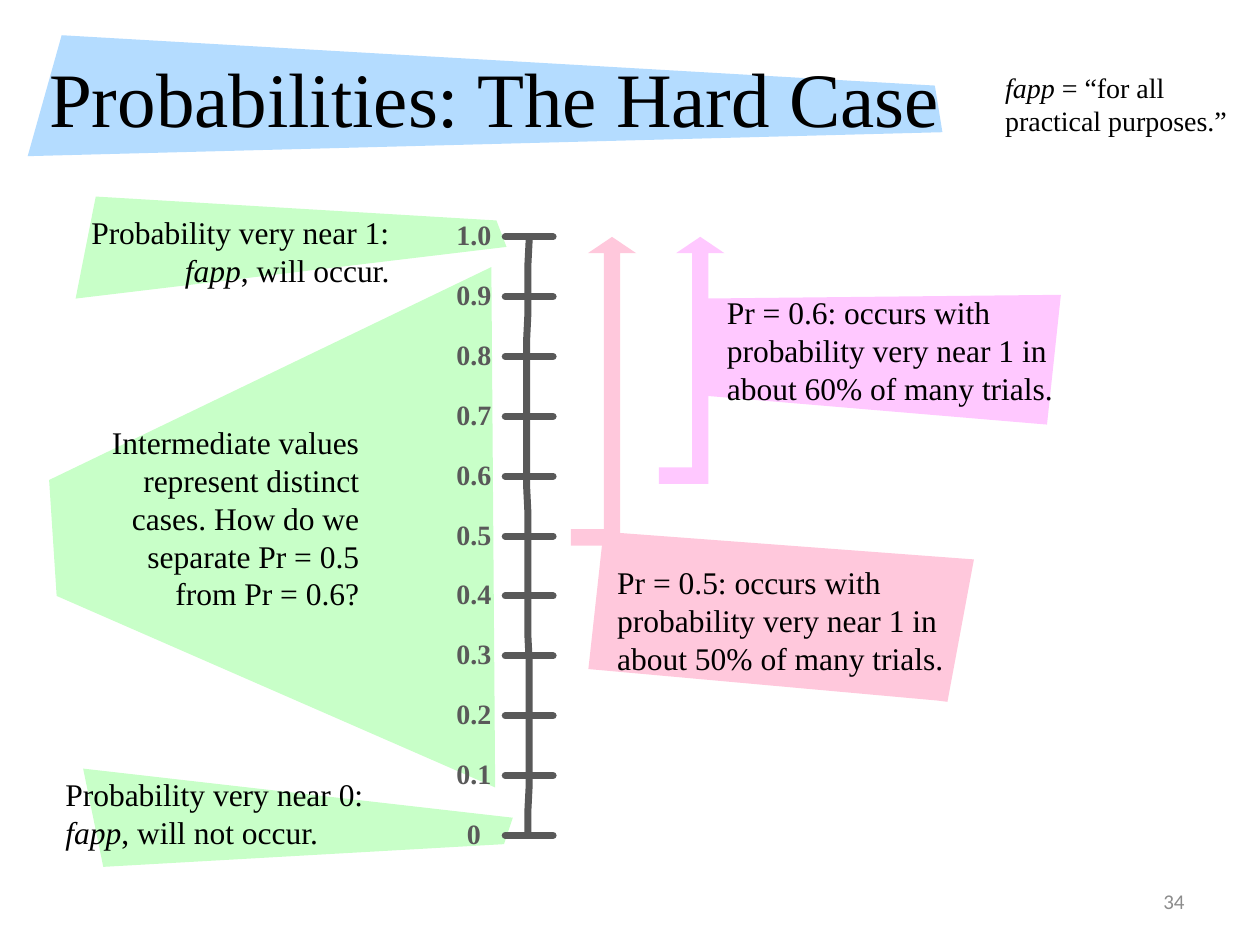
from lxml.etree import SubElement
from pptx import Presentation
from pptx.dml.color import RGBColor
from pptx.enum.shapes import MSO_CONNECTOR, MSO_SHAPE
from pptx.enum.text import MSO_ANCHOR, MSO_AUTO_SIZE, PP_ALIGN
from pptx.oxml.ns import qn
from pptx.util import Pt

PX = 9144
SERIF, BLACK, GREY = "Times New Roman", "000000", "595959"
BLUE, GREEN, PINK, VIOLET = "B4DCFF", "C8FFC8", "FFC8DC", "FFC8FF"
LEFT, RIGHT, CENTER = PP_ALIGN.LEFT, PP_ALIGN.RIGHT, PP_ALIGN.CENTER

TITLE = "Probabilities: The Hard Case"
PANELS = [
    (BLUE, [(49, 28), (742, 68), (748, 105), (22, 124)]),
    (GREEN, [(76, 156), (394, 175), (402, 196), (60, 237)]),
    (GREEN, [(390, 212), (393, 625), (45, 473), (39, 381)]),
    (PINK, [(479, 422), (773, 444), (752, 557), (744, 556), (467, 531)]),
    (VIOLET, [(842, 234), (555, 237), (558, 314), (831, 337)]),
    (GREEN, [(82, 688), (400, 670), (407, 649), (66, 610)]),
]
ARROWS = [(PINK, (453, 188, 52, 245)), (VIOLET, (523, 188, 52, 196))]
# Each paragraph is a list of (words, italic) runs.
NOTES = [
    ((57, 164, 262, 71), 18, RIGHT, False,
     [[("Probability very near 1:", False)], [("fapp", True), (", will occur.", False)]]),
    ((788, 51, 203, 64), 16, LEFT, True,
     [[("fapp", True), (" = “for all practical purposes.”", False)]]),
    ((57, 331, 238, 162), 18, RIGHT, True,
     [[("Intermediate values represent distinct cases. "
        "How do we separate Pr = 0.5 from Pr = 0.6?", False)]]),
    ((480, 442, 308, 101), 18, LEFT, True,
     [[("Pr = 0.5: occurs with probability very near 1 in about 50% of many trials.", False)]]),
    ((567, 228, 299, 101), 18, LEFT, True,
     [[("Pr = 0.6: occurs with probability very near 1 in about 60% of many trials.", False)]]),
    ((42, 610, 262, 71), 18, LEFT, False,
     [[("Probability very near 0:", False)], [("fapp", True), (", will not occur.", False)]]),
]
TICKS = ["1.0", "0.9", "0.8", "0.7", "0.6", "0.5", "0.4", "0.3", "0.2", "0.1", "0"]
AXIS_TOP, AXIS_BOTTOM = 188, 663
AXIS_CURVE = [(420, 190), (415, 349), (422, 504), (419, 663)]


def rgb(value):
    return RGBColor.from_string(value)


def emu(box):
    return [round(v * PX) for v in box]


def fill(sp, color):
    sp.shadow.inherit = False
    sp.fill.solid()
    sp.fill.fore_color.rgb = rgb(color)
    sp.line.fill.background()


def stroke(sp):
    sp.line.color.rgb = rgb(GREY)
    sp.line.width = Pt(4)
    sp._element.spPr.find(qn("a:ln")).set("cap", "rnd")


def outline(shapes, points, close=True):
    builder = shapes.build_freeform(*points[0], scale=PX)
    builder.add_line_segments(points[1:], close=close)
    return builder.convert_to_shape()


def style(r, size, color=BLACK, font=SERIF, bold=False, italic=False):
    r.font.size, r.font.name = Pt(size), font
    r.font.bold, r.font.italic = bold, italic
    r.font.color.rgb = rgb(color)


def add_text(shapes, box, size, align, wrap, paragraphs, **look):
    tf = shapes.add_textbox(*emu(box)).text_frame
    tf.word_wrap = wrap
    tf.auto_size = MSO_AUTO_SIZE.SHAPE_TO_FIT_TEXT
    for i, runs in enumerate(paragraphs):
        p = tf.add_paragraph() if i else tf.paragraphs[0]
        p.alignment = align
        for words, italic in runs:
            r = p.add_run()
            r.text = words
            style(r, size, italic=italic, **look)
    return tf


def bezier(t):
    weights = ((1 - t) ** 3, 3 * t * (1 - t) ** 2, 3 * t * t * (1 - t), t ** 3)
    return tuple(sum(w * pt[k] for w, pt in zip(weights, AXIS_CURVE)) for k in (0, 1))


def add_title(slide):
    title = slide.shapes.title
    title.left, title.top, title.width, title.height = emu((29, 30, 743, 94))
    tf = title.text_frame
    tf.text = TITLE
    tf.vertical_anchor = MSO_ANCHOR.MIDDLE
    tf.auto_size = MSO_AUTO_SIZE.NONE
    p = tf.paragraphs[0]
    p.alignment = LEFT
    style(p.runs[0], 44)
    slide.shapes._spTree.append(title._element)


def add_axis(shapes):
    axis = outline(shapes, [bezier(i / 24) for i in range(25)], close=False)
    axis.shadow.inherit = False
    axis.fill.background()
    stroke(axis)
    step = (AXIS_BOTTOM - AXIS_TOP) / (len(TICKS) - 1)
    for i, label in enumerate(TICKS):
        y = AXIS_TOP + i * step
        tick = shapes.add_connector(MSO_CONNECTOR.STRAIGHT, *emu((401, y, 439, y)))
        stroke(tick)
        SubElement(tick._element.spPr, qn("a:effectLst"))
        add_text(shapes, (352, y - 20, 48, 37), 16, CENTER, False,
                 [[(label, False)]], color=GREY, bold=True)


def main():
    prs = Presentation()
    prs.slide_width, prs.slide_height = emu((1000, 750))
    slide = prs.slides.add_slide(prs.slide_layouts[5])
    shapes = slide.shapes
    for color, points in PANELS:
        fill(outline(shapes, points), color)
    for color, box in ARROWS:
        sp = shapes.add_shape(MSO_SHAPE.BENT_UP_ARROW, *emu(box))
        for i, value in enumerate((0.25, 0.37, 0.25)):
            sp.adjustments[i] = value
        fill(sp, color)
    add_title(slide)
    for note in NOTES:
        add_text(shapes, *note)
    add_axis(shapes)
    number = add_text(shapes, (717, 695, 233, 40), 12, RIGHT, True,
                      [[("34", False)]], color="8C8C8C", font="Calibri")
    number.auto_size = MSO_AUTO_SIZE.NONE
    number.vertical_anchor = MSO_ANCHOR.MIDDLE
    prs.save("out.pptx")


if __name__ == "__main__":
    main()
